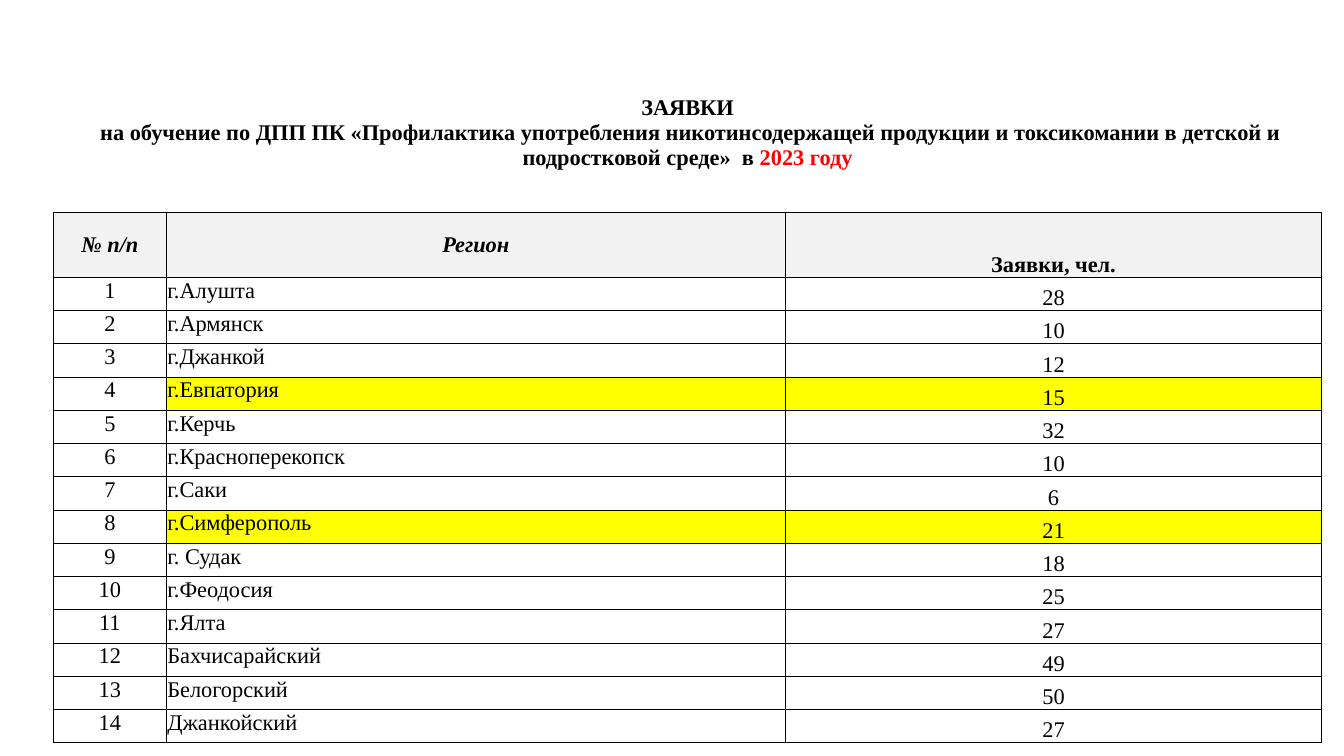
"""Build a slide with a table of training applications by region for 2023."""
from dataclasses import dataclass

from lxml import etree
from pptx import Presentation
from pptx import util as u
from pptx.dml.color import RGBColor
from pptx.enum import text
from pptx.oxml import ns


@dataclass(frozen=True)
class Theme:
    font: str = "Times New Roman"
    size: int = 16
    border: float = 0.5
    ink: str = "000000"
    accent: str = "FF0000"
    header: str = "F2F2F2"
    highlight: str = "FFFF00"


def add_borders(cell, sides):
    """Draw a thin solid line on each named side of a cell."""
    properties = cell._tc.get_or_add_tcPr()
    for side in sides:
        line = etree.SubElement(properties, ns.qn(f"a:ln{side}"), w=str(u.Pt(theme.border)))
        fill = etree.SubElement(line, ns.qn("a:solidFill"))
        etree.SubElement(fill, ns.qn("a:srgbClr"), val=theme.ink)


def format_cell(cell, anchor, alignment, bold=False, italic=False, fill=None):
    """Set the margins, fill and type of a cell."""
    cell.margin_left = cell.margin_right = cell.margin_top = u.Inches(0.01)
    cell.margin_bottom = 0
    cell.vertical_anchor = anchor
    if fill:
        cell.fill.solid()
        cell.fill.fore_color.rgb = RGBColor.from_string(fill)
    else:
        cell.fill.background()
    paragraph = cell.text_frame.paragraphs[0]
    paragraph.alignment = alignment
    font = paragraph.font
    font.name, font.size = theme.font, u.Pt(theme.size)
    font.bold, font.italic = bold, italic
    font.color.rgb = RGBColor.from_string(theme.ink)


theme = Theme()
top, middle, bottom = text.MSO_ANCHOR.TOP, text.MSO_ANCHOR.MIDDLE, text.MSO_ANCHOR.BOTTOM
left, center = text.PP_ALIGN.LEFT, text.PP_ALIGN.CENTER

headers = ["№ п/п", "Регион", "Заявки, чел."]
applications = [
    ("г.Алушта", 28),
    ("г.Армянск", 10),
    ("г.Джанкой", 12),
    ("г.Евпатория", 15),
    ("г.Керчь", 32),
    ("г.Красноперекопск", 10),
    ("г.Саки", 6),
    ("г.Симферополь", 21),
    ("г. Судак", 18),
    ("г.Феодосия", 25),
    ("г.Ялта", 27),
    ("Бахчисарайский", 49),
    ("Белогорский", 50),
    ("Джанкойский", 27),
]
highlighted = {"г.Евпатория", "г.Симферополь"}
column_widths = [1.12, 6.14, 5.32]
row_heights = [1.59, 0.64] + [0.33] * len(applications)

presentation = Presentation()
presentation.slide_width, presentation.slide_height = u.Inches(13.33), u.Inches(7.5)
slide = presentation.slides.add_slide(presentation.slide_layouts[6])

table = slide.shapes.add_table(
    len(row_heights), len(column_widths), u.Inches(0.53), u.Inches(0.52),
    u.Inches(sum(column_widths)), u.Inches(sum(row_heights)),
).table
table.first_row = table.horz_banding = False
plain_style = "{2D5ABB26-0587-4C30-8999-92F81FD0307C}"
table._tbl.tblPr.find(ns.qn("a:tableStyleId")).text = plain_style
for column, width in zip(table.columns, column_widths):
    column.width = u.Inches(width)
for row_index, height in enumerate(row_heights):
    table.rows[row_index].height = u.Inches(height)
    for cell in table.rows[row_index].cells:
        add_borders(cell, "LRTB" if row_index else "B")

title = table.cell(0, 0)
title.merge(table.cell(0, 2))
paragraph = title.text_frame.paragraphs[0]
paragraph.add_run().text = "ЗАЯВКИ"
paragraph.add_line_break()
paragraph.add_run().text = (
    " на обучение по ДПП ПК «Профилактика употребления никотинсодержащей продукции "
    "и токсикомании в детской и подростковой среде»  в "
)
year = paragraph.add_run()
year.text = "2023 году"
format_cell(title, middle, center, bold=True)
year.font.color.rgb = RGBColor.from_string(theme.accent)

for column_index, header in enumerate(headers):
    cell = table.cell(1, column_index)
    cell.text = header
    is_count = column_index == 2
    format_cell(cell, bottom if is_count else middle, center,
                bold=True, italic=not is_count, fill=theme.header)

for number, (region, count) in enumerate(applications, start=1):
    fill = theme.highlight if region in highlighted else None
    row = [(number, top, center, None), (region, top, left, fill), (count, bottom, center, fill)]
    for column_index, (value, anchor, alignment, color) in enumerate(row):
        cell = table.cell(number + 1, column_index)
        cell.text = str(value)
        format_cell(cell, anchor, alignment, fill=color)

presentation.save("out.pptx")
